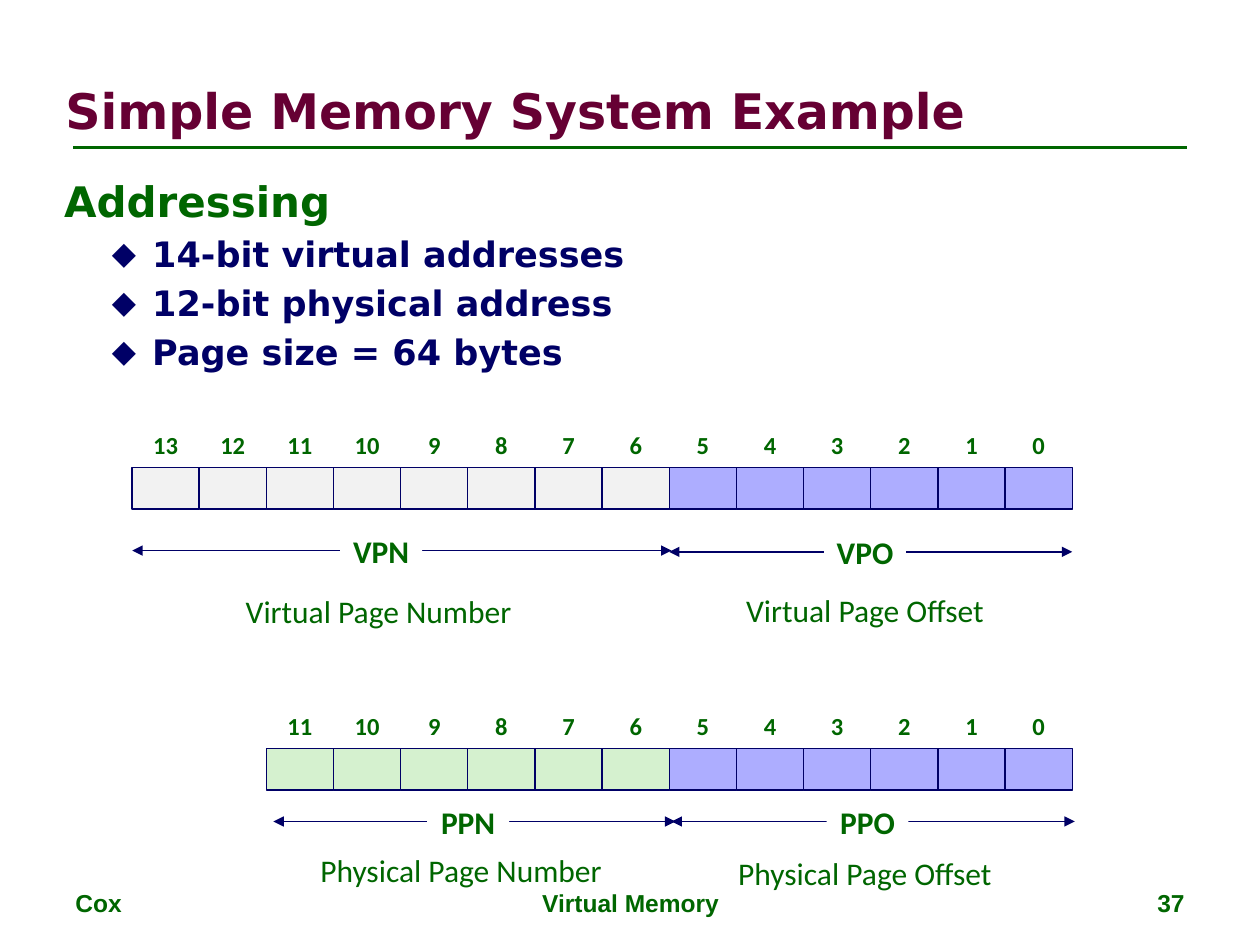
import pptx
import pptx.util
import pptx.dml.color
import pptx.enum.shapes
import pptx.enum.text
import pptx.oxml
import pptx.oxml.ns
import lxml.etree

Inches = pptx.util.Inches
Pt = pptx.util.Pt
align = pptx.enum.text.PP_ALIGN
anchor = pptx.enum.text.MSO_ANCHOR
qn = pptx.oxml.ns.qn
straight = pptx.enum.shapes.MSO_CONNECTOR.STRAIGHT
rect = pptx.enum.shapes.MSO_SHAPE.RECTANGLE
green, navy, wine = "006600", "000066", "660033"


def hue(code):
    return pptx.dml.color.RGBColor.from_string(code)


def put(text, home=None, at=None, frame=None, font="Calibri", size=18, color=green,
        bold=True, side=align.CENTER, mid=anchor.TOP, wrap=False, lines=None,
        before=0, fill=None):
    if frame is None:
        box = home.add_textbox(*map(Inches, at))
        frame = box.text_frame
        frame.word_wrap = wrap
        frame.vertical_anchor = mid
        if fill:
            box.fill.solid()
            box.fill.fore_color.rgb = hue(fill)
        para = frame.paragraphs[0]
    else:
        para = frame.add_paragraph()
    para.alignment = side
    para.space_before = Pt(before)
    if lines:
        para.line_spacing = lines
    run = para.add_run()
    run.text = text
    run.font.name = font
    run.font.size = Pt(size)
    run.font.bold = bold
    run.font.color.rgb = hue(color)
    return frame


deck = pptx.Presentation()
deck.slide_width, deck.slide_height = Inches(10), Inches(7.5)
shapes = deck.slides.add_slide(deck.slide_layouts[6]).shapes

spans = [
    (0.58, 9.42, 1.17, green, 1.5, None, None),
    (5.31, 8.51, 4.38, navy, 0.75, "VPO", 6.54),
    (5.33, 8.53, 6.52, navy, 0.75, "PPO", 6.56),
    (2.17, 5.36, 6.52, navy, 0.75, "PPN", 3.39),
    (1.05, 5.33, 4.37, navy, 0.75, "VPN", 2.7),
]
for start, end, y, color, width, name, x in spans:
    home = shapes.add_group_shape().shapes if name else shapes
    line = home.add_connector(straight, Inches(start), Inches(y), Inches(end), Inches(y))
    line.line.color.rgb = hue(color)
    line.line.width = Pt(width)
    lxml.etree.SubElement(line._element.spPr, qn("a:effectLst"))
    if name:
        for tip in ("a:headEnd", "a:tailEnd"):
            lxml.etree.SubElement(line.line._get_or_add_ln(), qn(tip), type="triangle")
        put(name, home, (x, y - 0.16, 0.65, 0.36), lines=0.88, before=6.8, fill="FFFFFF")

put("Simple Memory System Example", shapes, (0.42, 0.56, 7.99, 0.63), font="DejaVu Sans",
    size=28, color=wine, side=align.LEFT, mid=anchor.MIDDLE, wrap=True)
body = put("Addressing", shapes, (0.41, 1.34, 9.09, 1.73), font="DejaVu Sans", size=24,
           side=align.LEFT, wrap=True, before=4.8)
for fact in ("14-bit virtual addresses", "12-bit physical address", "Page size = 64 bytes"):
    put(fact, frame=body, font="DejaVu Sans", size=20, color=navy, side=align.LEFT, before=4)
    para = body.paragraphs[-1]
    para.level = 1
    props = para._p.get_or_add_pPr()
    props.set("marL", str(Inches(0.7)))
    props.set("indent", str(Inches(-0.32)))
    lxml.etree.SubElement(props, qn("a:buSzPct"), val="90000")
    lxml.etree.SubElement(props, qn("a:buFont"), typeface="DejaVu Sans")
    lxml.etree.SubElement(props, qn("a:buChar"), char="◆")

right, cell, tall = 8.51, 0.533, 0.33
for bits, top, shade in ((14, 3.71, "F2F2F2"), (12, 5.94, "D5F1CF")):
    for bit in reversed(range(bits)):
        left = right - (bit + 1) * cell
        box = shapes.add_shape(rect, Inches(left), Inches(top), Inches(cell), Inches(tall))
        box.shadow.inherit = False
        box.fill.solid()
        box.fill.fore_color.rgb = hue("ADADFF" if bit < 6 else shade)
        box.line.color.rgb = hue(navy)
        box.line.width = Pt(0.75)
        put(str(bit), shapes, (left, top - tall, cell, tall), size=14, mid=anchor.MIDDLE,
            lines=0.88, before=5.2)

for name, x, y, width in (
    ("Virtual Page Number", 1.84, 4.69, 2.33),
    ("Virtual Page Offset", 5.81, 4.68, 2.11),
    ("Physical Page Number", 2.43, 6.74, 2.46),
    ("Physical Page Offset", 5.75, 6.77, 2.23),
):
    put(name, shapes, (x, y, width, 0.37), bold=False, lines=0.88, before=6.8)

for note, x, width, side in (
    ("37", 7.17, 2.33, align.RIGHT),
    ("Virtual Memory", 3.42, 3.17, align.CENTER),
    ("Cox", 0.5, 2.33, align.LEFT),
):
    put(note, shapes, (x, 7, width, 0.35), font="Arial", size=14, side=side, wrap=True)

deck.save("out.pptx")
